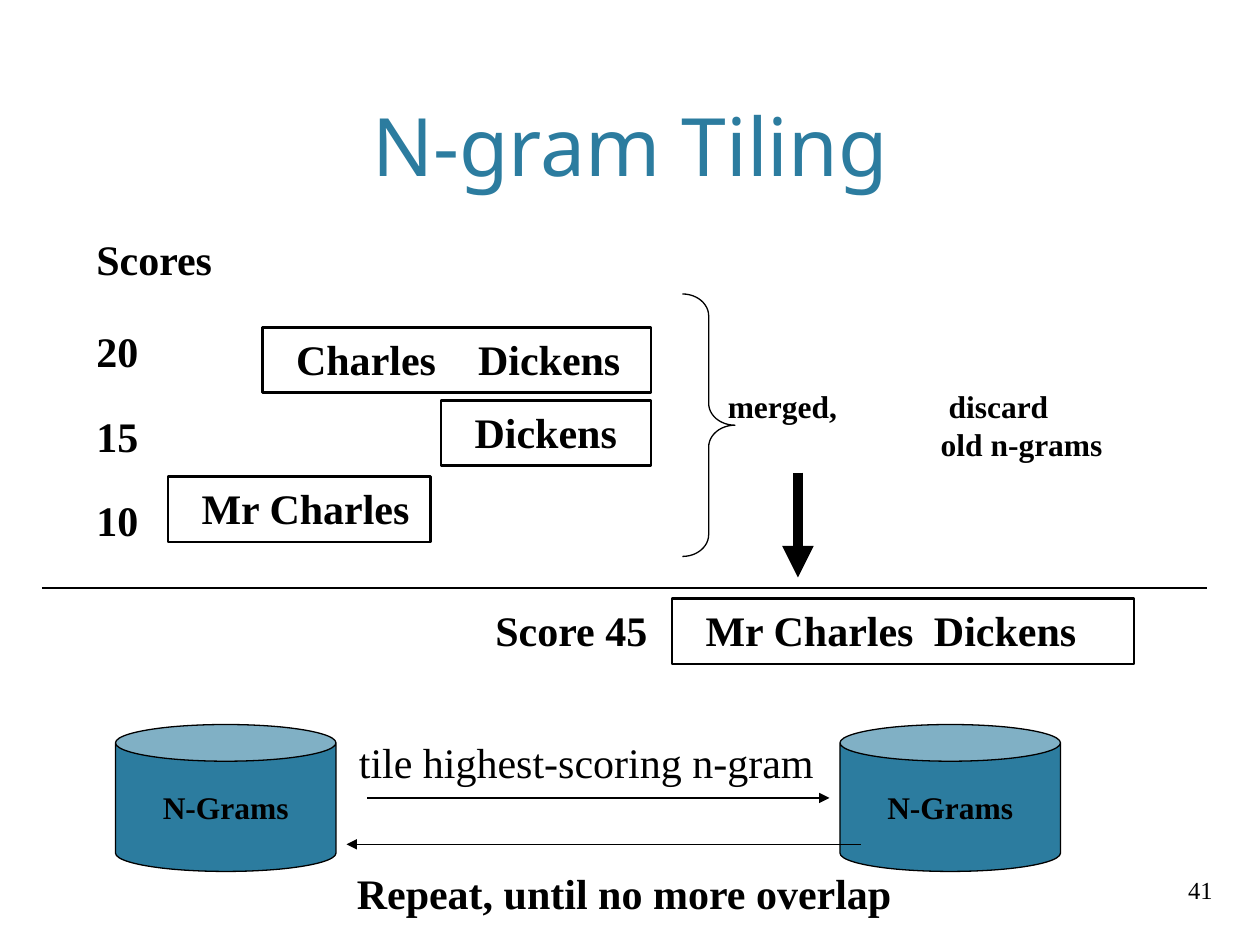
"""Build the N-gram tiling slide."""
from dataclasses import dataclass
from typing import Optional

from lxml import etree
from pptx import Presentation
from pptx import util as u
from pptx.dml.color import RGBColor
from pptx.enum import shapes, text
from pptx.oxml import ns

BLACK = RGBColor(0x00, 0x00, 0x00)
TEAL = RGBColor(0x2C, 0x7C, 0x9F)
SERIF = "Times New Roman"
LEFT, CENTER, RIGHT = text.PP_ALIGN.LEFT, text.PP_ALIGN.CENTER, text.PP_ALIGN.RIGHT
TOP, MIDDLE, BOTTOM = text.MSO_ANCHOR.TOP, text.MSO_ANCHOR.MIDDLE, text.MSO_ANCHOR.BOTTOM


@dataclass
class Label:
    words: str
    x: float
    y: float
    w: float
    h: float
    size: float = 24
    bold: bool = True
    align: text.PP_ALIGN = LEFT
    anchor: text.MSO_ANCHOR = TOP
    font: str = SERIF
    color: RGBColor = BLACK
    wrap: bool = False
    tab: Optional[float] = None


@dataclass
class NgramBox:
    words: str
    x: float
    y: float
    w: float
    tab: Optional[float] = None


@dataclass
class Line:
    x1: float
    y1: float
    x2: float
    y2: float
    weight: float = 0.75
    arrow: bool = True


LABELS = [
    Label("41", 622, 494, 78, 29, 14, False, RIGHT, MIDDLE, wrap=True),
    Label("N-gram Tiling", 43.2, 8.6, 633.6, 105.2, 46, False, CENTER, BOTTOM,
          "Noto Sans", TEAL, True),
    Label("merged,\t discard\v\told n-grams", 408.8, 217.5, 230, 51, 18,
          anchor=MIDDLE, tab=121.7),
    Label("Score 45", 276, 342, 101.5, 36),
    Label("tile highest-scoring n-gram", 198, 417.6, 274.3, 36, bold=False),
    Label("Repeat, until no more overlap", 196.8, 492, 320.4, 36),
]
BOXES = [
    NgramBox("Dickens", 252, 228.8, 120),
    NgramBox("Charles\tDickens", 150, 187, 222, 104),
    NgramBox("Mr Charles", 96, 272.4, 150),
    NgramBox("Mr Charles\tDickens", 384, 342, 264, 130.5),
]
LINES = [
    Line(456, 270, 456, 330, 6),
    Line(24, 336, 690, 336, arrow=False),
    Line(210, 456, 474, 456),
    Line(492, 482.5, 198, 482.5),
]
SCORES = [("Scores", 0), ("20", 26.5), ("15", 22.5), ("10", 22.5)]
CAN_LEFTS = [66, 480]


def style(p, size: float, bold: bool = True, font: str = SERIF,
          color: RGBColor = BLACK, align=LEFT, tab: Optional[float] = None) -> None:
    p.alignment = align
    if tab is not None:
        tabs = etree.SubElement(p._p.get_or_add_pPr(), ns.qn("a:tabLst"))
        etree.SubElement(tabs, ns.qn("a:tab"), pos=str(u.Pt(tab)), algn="l")
    p.font.size, p.font.bold, p.font.name = u.Pt(size), bold, font
    p.font.color.rgb = color


def add_text_box(s, x: float, y: float, w: float, h: float):
    return s.shapes.add_textbox(u.Pt(x), u.Pt(y), u.Pt(w), u.Pt(h)).text_frame


def add_label(s, label: Label) -> None:
    tf = add_text_box(s, label.x, label.y, label.w, label.h)
    tf.word_wrap = label.wrap
    tf.vertical_anchor = label.anchor
    p = tf.paragraphs[0]
    p.text = label.words
    style(p, label.size, label.bold, label.font, label.color, label.align, label.tab)


def add_outlined(s, kind, x: float, y: float, w: float, h: float,
                 weight: float = 0.75, fill: Optional[RGBColor] = None):
    sp = s.shapes.add_shape(kind, u.Pt(x), u.Pt(y), u.Pt(w), u.Pt(h))
    sp.shadow.inherit = False
    if fill is None:
        sp.fill.background()
    else:
        sp.fill.solid()
        sp.fill.fore_color.rgb = fill
    sp.line.color.rgb = BLACK
    sp.line.width = u.Pt(weight)
    return sp


def add_ngram(s, box: NgramBox) -> None:
    sp = add_outlined(s, shapes.MSO_SHAPE.RECTANGLE, box.x, box.y, box.w, 37.4, 1.5)
    tf = sp.text_frame
    tf.word_wrap = True
    tf.vertical_anchor = TOP
    tf.margin_left = u.Pt(19.2)
    p = tf.paragraphs[0]
    p.text = box.words
    style(p, 24, tab=box.tab)


def add_can(s, x: float) -> None:
    sp = add_outlined(s, shapes.MSO_SHAPE.CAN, x, 414, 126, 84, fill=TEAL)
    tf = sp.text_frame
    tf.word_wrap = False
    tf.vertical_anchor = MIDDLE
    p = tf.paragraphs[0]
    p.text = "N-Grams"
    style(p, 18, align=CENTER)


def add_line(s, line: Line) -> None:
    cx = s.shapes.add_connector(shapes.MSO_CONNECTOR.STRAIGHT, u.Pt(line.x1),
                                u.Pt(line.y1), u.Pt(line.x2), u.Pt(line.y2))
    cx.line.color.rgb = BLACK
    cx.line.width = u.Pt(line.weight)
    if line.arrow:
        etree.SubElement(cx.line._get_or_add_ln(), ns.qn("a:tailEnd"), type="triangle")
    etree.SubElement(cx._element.spPr, ns.qn("a:effectLst"))


def add_scores(s) -> None:
    tf = add_text_box(s, 48, 133.2, 81.4, 180)
    tf.word_wrap = False
    for i, (words, gap) in enumerate(SCORES):
        p = tf.add_paragraph() if i else tf.paragraphs[0]
        p.text = words
        p.line_spacing = 0.9
        p.space_before = u.Pt(gap)
        style(p, 24)


def main() -> None:
    prs = Presentation()
    prs.slide_width, prs.slide_height = u.Pt(720), u.Pt(540)
    s = prs.slides.add_slide(prs.slide_layouts[6])
    for box in BOXES:
        add_ngram(s, box)
    add_scores(s)
    brace = add_outlined(s, shapes.MSO_SHAPE.RIGHT_BRACE, 390, 168, 30, 150)
    brace.adjustments[0] = 0.417
    for x in CAN_LEFTS:
        add_can(s, x)
    for line in LINES:
        add_line(s, line)
    for label in LABELS:
        add_label(s, label)
    prs.save("out.pptx")


if __name__ == "__main__":
    main()
